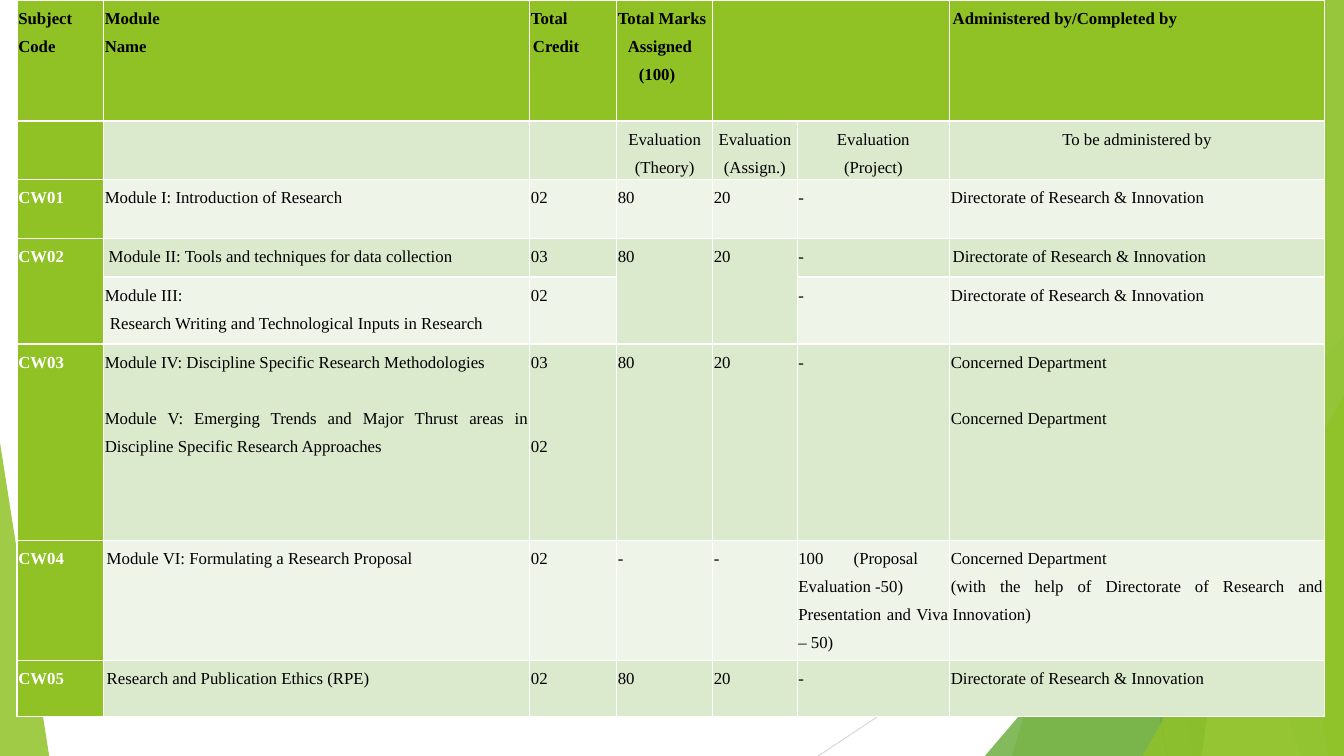
from lxml import etree
from pptx import Presentation
from pptx.dml.color import RGBColor
from pptx.enum.shapes import MSO_CONNECTOR, MSO_SHAPE
from pptx.enum.text import PP_ALIGN
from pptx.oxml.ns import qn
from pptx.util import Cm, Pt

STRAIGHT = MSO_CONNECTOR.STRAIGHT
TRIANGLE = MSO_SHAPE.ISOSCELES_TRIANGLE
LEFT, CENTER, JUSTIFY = PP_ALIGN.LEFT, PP_ALIGN.CENTER, PP_ALIGN.JUSTIFY
WIDTH, HEIGHT = 33.87, 19.05
GREEN, MID, PALE = "90C226", "DBE9CD", "EEF4E8"


def paint(fill, color):
    fill.solid()
    fill.fore_color.rgb = RGBColor.from_string(color)


def write(para, text, color="000000", bold=False, align=JUSTIFY, first=0, hang=0, before=0):
    """Fill a paragraph; first and hang indent the first or the later lines, in cm."""
    para.alignment = align
    para.line_spacing = 1.5
    para.space_before = Pt(before)
    properties = para._p.get_or_add_pPr()
    properties.set("marL", str(Cm(hang)))
    properties.set("indent", str(Cm(first - hang)))
    span = para.add_run()
    span.text = text
    span.font.name = "Times New Roman"
    span.font.size = Pt(12)
    span.font.bold = bold
    paint(span.font.fill, color)


deck = Presentation()
deck.slide_width, deck.slide_height = Cm(WIDTH), Cm(HEIGHT)
page = deck.slides.add_slide(deck.slide_layouts[6])

# Backdrop: thin lines, then translucent facets
for start_x, start_y, end_x, color in [(26.04, 0, 29.41, "BFBFBF"),
                                       (WIDTH, 10.24, 20.62, "D9D9D9")]:
    ray = page.shapes.add_connector(STRAIGHT, Cm(start_x), Cm(start_y), Cm(end_x), Cm(HEIGHT))
    ray.line.width = Pt(0.75)
    paint(ray.line.fill, color)
    etree.SubElement(ray._element.spPr, qn("a:effectLst"))

# Bands: (top x, bottom x); triangles: (left, top, width, apex position)
facets = [
    ((31.19, 25.5), GREEN, 30),
    ((26.67, 30.05), GREEN, 20),
    ((24.82, 8.46, 9.05, 1), "54A021", 72),
    ((25.93, 32.79), "3F7819", 70),
    ((33.1, 30.28), "C0E474", 70),
    ((30.38, 33.48), GREEN, 65),
    ((28.8, 9.98, 5.07, 1), GREEN, 80),
    ((0, 11.15, 1.24, 0), GREEN, 85),
]
for geometry, color, opacity in facets:
    if len(geometry) == 2:
        top_x, bottom_x = geometry
        outline = page.shapes.build_freeform(Cm(top_x), 0)
        outline.add_line_segments([(Cm(WIDTH), 0), (Cm(WIDTH), Cm(HEIGHT)),
                                   (Cm(bottom_x), Cm(HEIGHT))])
        facet = outline.convert_to_shape()
    else:
        left, top, width, apex = geometry
        facet = page.shapes.add_shape(TRIANGLE, Cm(left), Cm(top), Cm(width), Cm(HEIGHT - top))
        facet.adjustments[0] = apex
    facet.shadow.inherit = False
    facet.line.fill.background()
    paint(facet.fill, color)
    tint = facet._element.spPr.find(".//" + qn("a:srgbClr"))
    etree.SubElement(tint, qn("a:alpha"), val=str(opacity * 1000))

# Course work table; a line break starts a new paragraph
directorate = "Directorate of Research & Innovation"
department = "Concerned Department"
column_widths = [2.18, 10.74, 2.19, 2.42, 2.13, 3.84, 9.45]
rows = [
    (3.05, GREEN, ["Subject Code", "Module\nName", "Total Credit",
                   "Total Marks Assigned\n(100)", "", "", "Administered by/Completed by"]),
    (1.47, MID, ["", "", "", "Evaluation (Theory)", "Evaluation\n(Assign.)",
                 "Evaluation\n(Project)", "To be administered by"]),
    (1.48, PALE, ["CW01", "Module I: Introduction of Research", "02", "80", "20", "-",
                  directorate]),
    (0.98, MID, ["CW02", "Module II: Tools and techniques for data collection", "03", "80",
                 "20", "-", directorate]),
    (1.69, PALE, ["", "Module III:\nResearch Writing and Technological Inputs in Research",
                  "02", "", "", "-", directorate]),
    (4.94, MID, ["CW03", "Module IV: Discipline Specific Research Methodologies\n"
                 "Module V: Emerging Trends and Major Thrust areas in "
                 "Discipline Specific Research Approaches",
                 "03\n02", "80", "20", "-", department + "\n" + department]),
    (3.03, PALE, ["CW04", "Module VI: Formulating a Research Proposal", "02", "-", "-",
                  "100 (Proposal  Evaluation -50)\nPresentation and Viva – 50)",
                  department + "\n(with the help of Directorate of Research and Innovation)"]),
    (1.42, MID, ["CW05", "Research and Publication Ethics (RPE)", "02", "80", "20", "-",
                 directorate]),
]
# Indents and gaps by (row, column, paragraph)
offsets = {
    (0, 2, 0): {"hang": 0.05},
    (0, 3, 0): {"hang": 0.25},
    (0, 3, 1): {"first": 0.53},
    (0, 6, 0): {"first": 0.05},
    (3, 1, 0): {"first": 0.1},
    (3, 6, 0): {"first": 0.05},
    (4, 1, 1): {"first": 0.13},
    (5, 1, 1): {"before": 20},
    (5, 2, 1): {"before": 40},
    (5, 6, 1): {"before": 20},
    (6, 1, 0): {"first": 0.05},
    (6, 6, 1): {"hang": 0.05},
    (7, 1, 0): {"first": 0.05},
}

frame = page.shapes.add_table(len(rows), len(column_widths), Cm(0.43), Cm(0),
                              Cm(sum(column_widths)), Cm(sum(row[0] for row in rows)))
table = frame.table
table.first_col = True
for column, width in zip(table.columns, column_widths):
    column.width = Cm(width)

for row_index, (height, row_color, texts) in enumerate(rows):
    table.rows[row_index].height = Cm(height)
    header = row_index == 0
    for column_index, text in enumerate(texts):
        cell = table.cell(row_index, column_index)
        code = column_index == 0
        cell.margin_left = cell.margin_right = Cm(0.03)
        cell.margin_top = cell.margin_bottom = 0
        paint(cell.fill, GREEN if code else row_color)
        if not text:
            continue
        align = LEFT if header else CENTER if row_index == 1 else JUSTIFY
        for index, line in enumerate(text.split("\n")):
            para = cell.text_frame.add_paragraph() if index else cell.text_frame.paragraphs[0]
            write(para, line, color="FFFFFF" if code and not header else "000000",
                  bold=header or code, align=align,
                  **offsets.get((row_index, column_index, index), {}))

table.cell(0, 4).merge(table.cell(0, 5))
for column_index in (0, 3, 4):
    table.cell(3, column_index).merge(table.cell(4, column_index))

deck.save("out.pptx")
